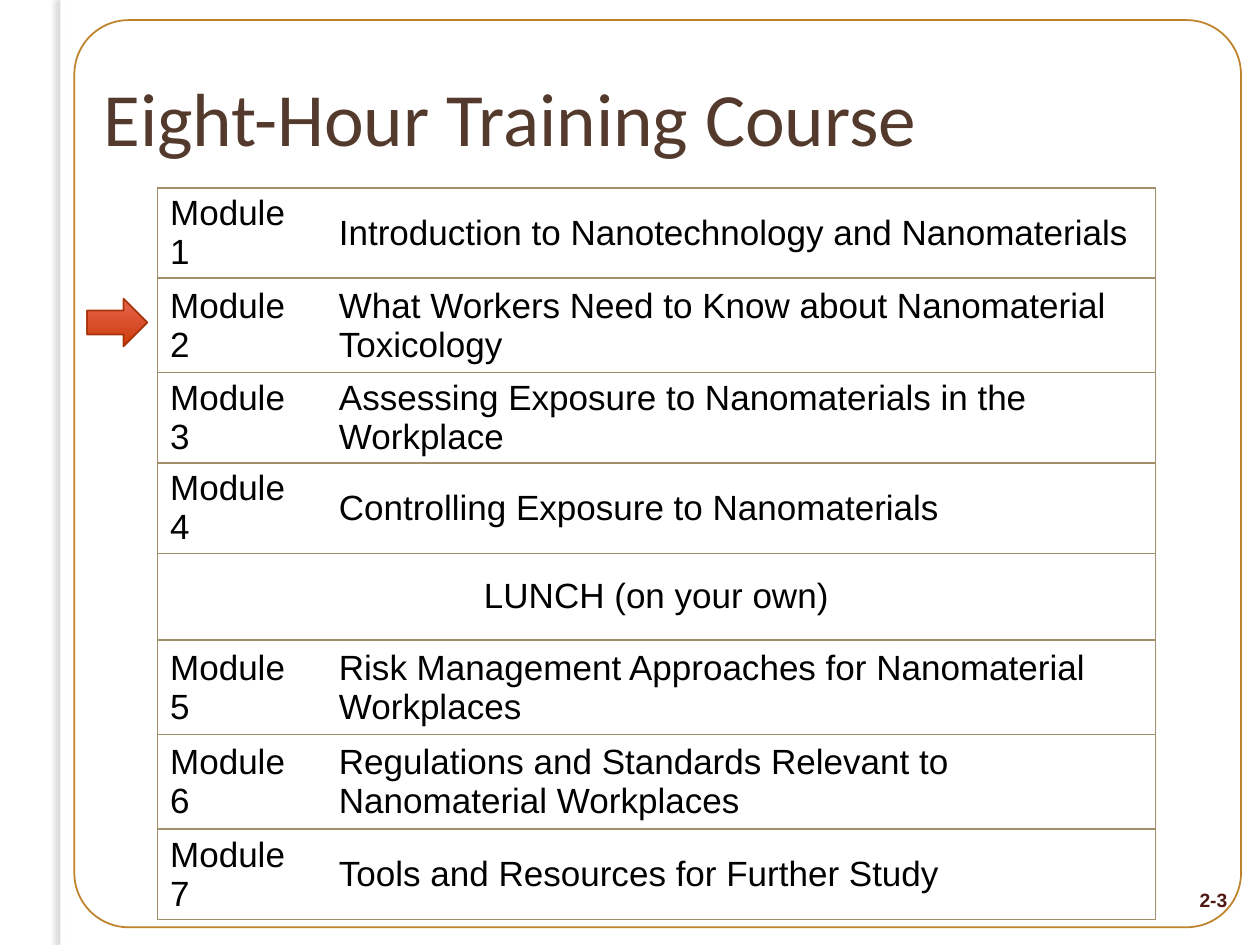
import dataclasses
import typing

import lxml.etree
import pptx
import pptx.dml.color
import pptx.enum.shapes
import pptx.enum.text
import pptx.oxml.ns
import pptx.util

Inches = pptx.util.Inches
Pt = pptx.util.Pt
qn = pptx.oxml.ns.qn
MSO_SHAPE = pptx.enum.shapes.MSO_SHAPE
MSO_ANCHOR = pptx.enum.text.MSO_ANCHOR
PP_ALIGN = pptx.enum.text.PP_ALIGN

COLORS = {
    "paper": "FFFFFF",
    "shadow": "74726D",
    "frame": "B77513",
    "number": "4E1710",
    "title": "533A2C",
    "text": "000000",
    "border": "A28E6A",
    "arrow_top": "E76450",
    "arrow_bottom": "CC3B08",
    "arrow_edge": "A32F06",
}


@dataclasses.dataclass
class Session:
    label: str
    topic: str
    height: float


SESSIONS = [
    Session("Module 1", "Introduction to Nanotechnology and Nanomaterials", 0.69),
    Session("Module 2", "What Workers Need to Know about Nanomaterial Toxicology", 0.75),
    Session("Module 3", "Assessing Exposure to Nanomaterials in the Workplace", 0.69),
    Session("Module 4", "Controlling Exposure to Nanomaterials", 0.69),
    Session("LUNCH (on your own)", "", 0.69),
    Session("Module 5", "Risk Management Approaches for Nanomaterial Workplaces", 0.75),
    Session("Module 6", "Regulations and Standards Relevant to Nanomaterial Workplaces", 0.75),
    Session("Module 7", "Tools and Resources for Further Study", 0.69),
]
COLUMN_WIDTHS = (1.34, 6.58)
CELL_MARGIN = Pt(1.8)


def rgb(name: str) -> pptx.dml.color.RGBColor:
    return pptx.dml.color.RGBColor.from_string(COLORS[name])


def add_element(parent: typing.Any, tag: str, **attributes: typing.Any) -> typing.Any:
    values = {key: str(value) for key, value in attributes.items()}
    return lxml.etree.SubElement(parent, qn(tag), values)


def write(frame: typing.Any, text: str, size: int, color: str, font: str = "Arial",
          align: typing.Any = PP_ALIGN.LEFT, bold: bool = False) -> None:
    frame.text = text
    frame.word_wrap = True
    paragraph = frame.paragraphs[0]
    paragraph.alignment = align
    run_font = paragraph.runs[0].font
    run_font.size = Pt(size)
    run_font.name = font
    run_font.bold = bold
    run_font.color.rgb = rgb(color)


def add_plain_shape(slide: typing.Any, preset: typing.Any, box: tuple,
                    edge: typing.Optional[str] = None) -> typing.Any:
    shape = slide.shapes.add_shape(preset, *map(Inches, box))
    shape.shadow.inherit = False
    if edge is None:
        shape.line.fill.background()
    else:
        shape.line.color.rgb = rgb(edge)
        shape.line.width = Pt(1)
        edge_color = shape.line._ln.find(".//" + qn("a:srgbClr"))
        add_element(edge_color, "a:alpha", val=90000)
    return shape


def add_page_frame(slide: typing.Any) -> None:
    strip = add_plain_shape(slide, MSO_SHAPE.RECTANGLE, (0.48, 0, 0.08, 7.5))
    strip.fill.solid()
    strip.fill.fore_color.rgb = rgb("paper")
    effects = strip._element.spPr.find(qn("a:effectLst"))
    shadow = add_element(effects, "a:outerShdw", blurRad=Pt(3), dist=Pt(3),
                         dir=180 * 60000, rotWithShape=0)
    shadow_color = add_element(shadow, "a:srgbClr", val=COLORS["shadow"])
    add_element(shadow_color, "a:alpha", val=25000)

    outline = add_plain_shape(slide, MSO_SHAPE.ROUNDED_RECTANGLE,
                              (0.59, 0.16, 9.26, 7.2), "frame")
    outline.adjustments[0] = 0.06
    outline.fill.background()

    number = slide.shapes.add_textbox(Inches(9.14), Inches(7), Inches(0.7), Inches(0.29))
    write(number.text_frame, "2-3", 11, "number", align=PP_ALIGN.RIGHT, bold=True)


def add_title(slide: typing.Any) -> None:
    title = slide.shapes.title
    title.left, title.top = Inches(0.72), Inches(0.3)
    title.width, title.height = Inches(9.05), Inches(1.25)
    write(title.text_frame, "Eight-Hour Training Course", 43, "title", "Calibri")
    title.text_frame.auto_size = pptx.enum.text.MSO_AUTO_SIZE.NONE
    title.text_frame.vertical_anchor = MSO_ANCHOR.MIDDLE


def style_cell(cell: typing.Any, visible_sides: str) -> None:
    properties = cell._tc.get_or_add_tcPr()
    for side in "LRTB":
        border = add_element(properties, f"a:ln{side}", w=Pt(1))
        if side in visible_sides:
            fill = add_element(border, "a:solidFill")
            add_element(fill, "a:srgbClr", val=COLORS["border"])
        else:
            add_element(border, "a:noFill")
    cell.fill.solid()
    cell.fill.fore_color.rgb = rgb("paper")
    cell.vertical_anchor = MSO_ANCHOR.MIDDLE
    cell.margin_top = cell.margin_bottom = CELL_MARGIN


def add_schedule(slide: typing.Any) -> None:
    schedule = slide.shapes.add_table(
        len(SESSIONS), len(COLUMN_WIDTHS), Inches(1.25), Inches(1.49),
        Inches(sum(COLUMN_WIDTHS)), Inches(sum(s.height for s in SESSIONS))).table
    schedule.first_row = False
    schedule.horz_banding = False
    for column, width in zip(schedule.columns, COLUMN_WIDTHS):
        column.width = Inches(width)
    for index, session in enumerate(SESSIONS):
        schedule.rows[index].height = Inches(session.height)
        label, topic = schedule.cell(index, 0), schedule.cell(index, 1)
        if session.topic:
            write(label.text_frame, session.label, 20, "text")
            write(topic.text_frame, session.topic, 20, "text")
            style_cell(label, "LTB")
        else:
            label.merge(topic)
            write(label.text_frame, session.label, 20, "text", align=PP_ALIGN.CENTER)
            style_cell(label, "LRTB")
        style_cell(topic, "RTB")


def add_current_marker(slide: typing.Any) -> None:
    marker = add_plain_shape(slide, MSO_SHAPE.RIGHT_ARROW,
                             (0.69, 2.37, 0.48, 0.38), "arrow_edge")
    marker.fill.gradient()
    marker.fill.gradient_angle = 270
    for stop, color in zip(marker.fill.gradient_stops, ("arrow_top", "arrow_bottom")):
        stop.color.rgb = rgb(color)


def main() -> None:
    presentation = pptx.Presentation()
    presentation.slide_width = Inches(10)
    presentation.slide_height = Inches(7.5)
    slide = presentation.slides.add_slide(presentation.slide_layouts[5])
    add_page_frame(slide)
    add_title(slide)
    add_schedule(slide)
    add_current_marker(slide)
    presentation.save("out.pptx")


if __name__ == "__main__":
    main()
